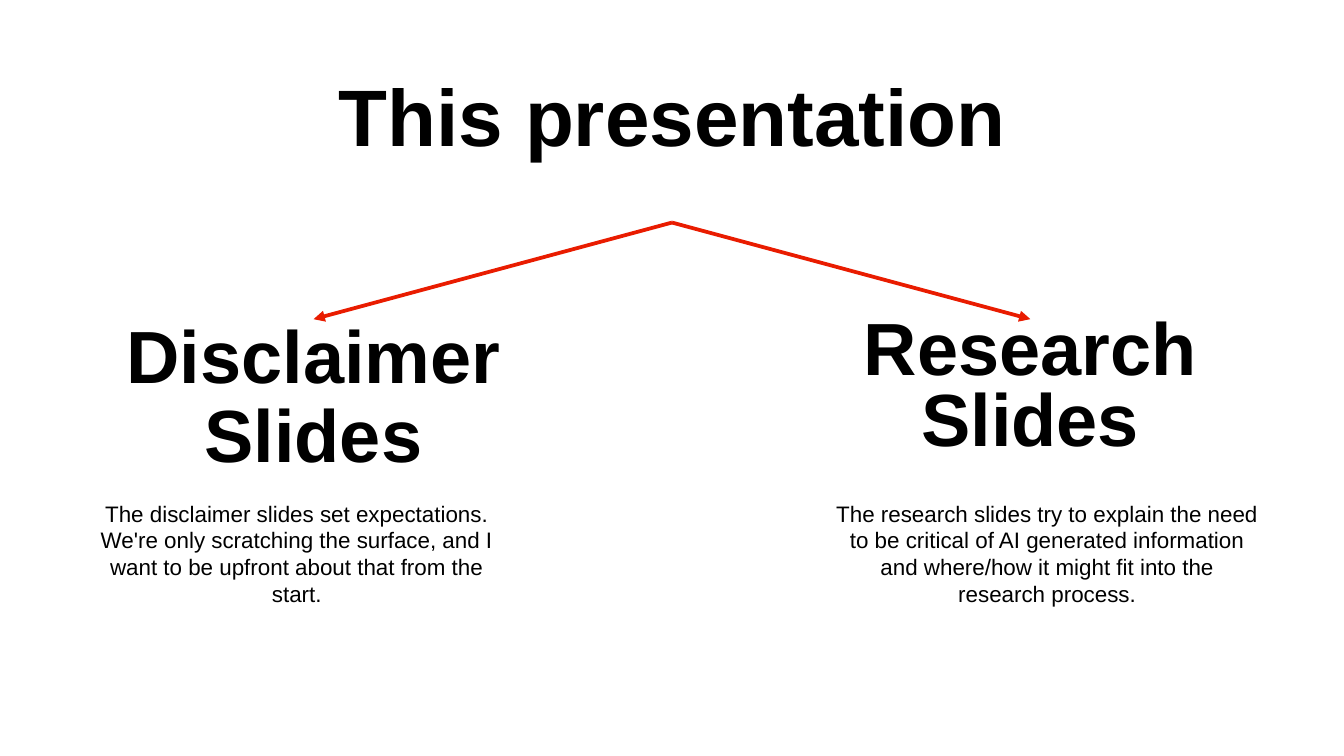
import pptx
import pptx.dml.color
import pptx.enum.shapes
import pptx.enum.text
import pptx.oxml
import pptx.oxml.ns
import pptx.util

PX = 9525

THEME = {
    "red": pptx.dml.color.RGBColor.from_string("E91C00"),
    "line": pptx.util.Pt(2),
    "head": {"size": pptx.util.Pt(42.9), "bold": True},
    "topic": {"size": pptx.util.Pt(39.6), "bold": True},
    "body": {"size": pptx.util.Pt(12), "bold": False},
    "font": "Arial",
    "ink": pptx.dml.color.RGBColor.from_string("000000"),
}


def format_all(item, values):
    for key, value in values.items():
        setattr(item, key, value)


def add_text(slide, box, words, style, lead=1.0, pad=(0, 0)):
    shape = slide.shapes.add_textbox(*[n * PX for n in box])
    frame = shape.text_frame
    side, edge = [n * PX for n in pad]
    format_all(frame, {
        "word_wrap": True,
        "vertical_anchor": pptx.enum.text.MSO_ANCHOR.TOP,
        "margin_left": side,
        "margin_right": side,
        "margin_top": edge,
        "margin_bottom": edge,
    })
    para = frame.paragraphs[0]
    format_all(para, {
        "text": words,
        "alignment": pptx.enum.text.PP_ALIGN.CENTER,
        "line_spacing": lead,
    })
    font = para.runs[0].font
    format_all(font, {"name": THEME["font"], **THEME[style]})
    font.color.rgb = THEME["ink"]


def add_arrow(slide, start, end):
    kind = pptx.enum.shapes.MSO_CONNECTOR.STRAIGHT
    arrow = slide.shapes.add_connector(kind, *[n * PX for n in start + end])
    arrow.line.color.rgb = THEME["red"]
    arrow.line.width = THEME["line"]
    space = pptx.oxml.ns.nsdecls("a")
    tail = pptx.oxml.parse_xml(f'<a:tailEnd {space} type="triangle"/>')
    props = arrow._element.spPr
    props.find(pptx.oxml.ns.qn("a:ln")).append(tail)
    props.append(pptx.oxml.parse_xml(f"<a:effectLst {space}/>"))


def add_header(slide, box, words):
    add_text(slide, box, words, "head", 0.9)


def add_branch(slide, box, root, topic, lead, note, inset):
    left, top, width, height = box
    add_arrow(slide, root, (left + width // 2, top))
    add_text(slide, (left, top, width, 105), topic, "topic", lead)
    add_text(slide, (left + inset, top + 124, 324, height - 124),
             note, "body", pad=(10, 5))


def main():
    deck = pptx.Presentation()
    format_all(deck, {"slide_width": 960 * PX, "slide_height": 540 * PX})
    slide = deck.slides.add_slide(deck.slide_layouts[6])
    add_header(slide, (0, 55, 960, 105), "This presentation")
    branches = [
        (32, "Disclaimer Slides", 0.9,
         "The disclaimer slides set expectations. We're only scratching the "
         "surface, and I want to be upfront about that from the start.", 18),
        (544, "Research Slides", 0.8,
         "The research slides try to explain the need to be critical of AI "
         "generated information and where/how it might fit into the research "
         "process.", 42),
    ]
    for left, *parts in branches:
        add_branch(slide, (left, 228, 384, 211), (480, 159), *parts)
    deck.save("out.pptx")


if __name__ == "__main__":
    main()
